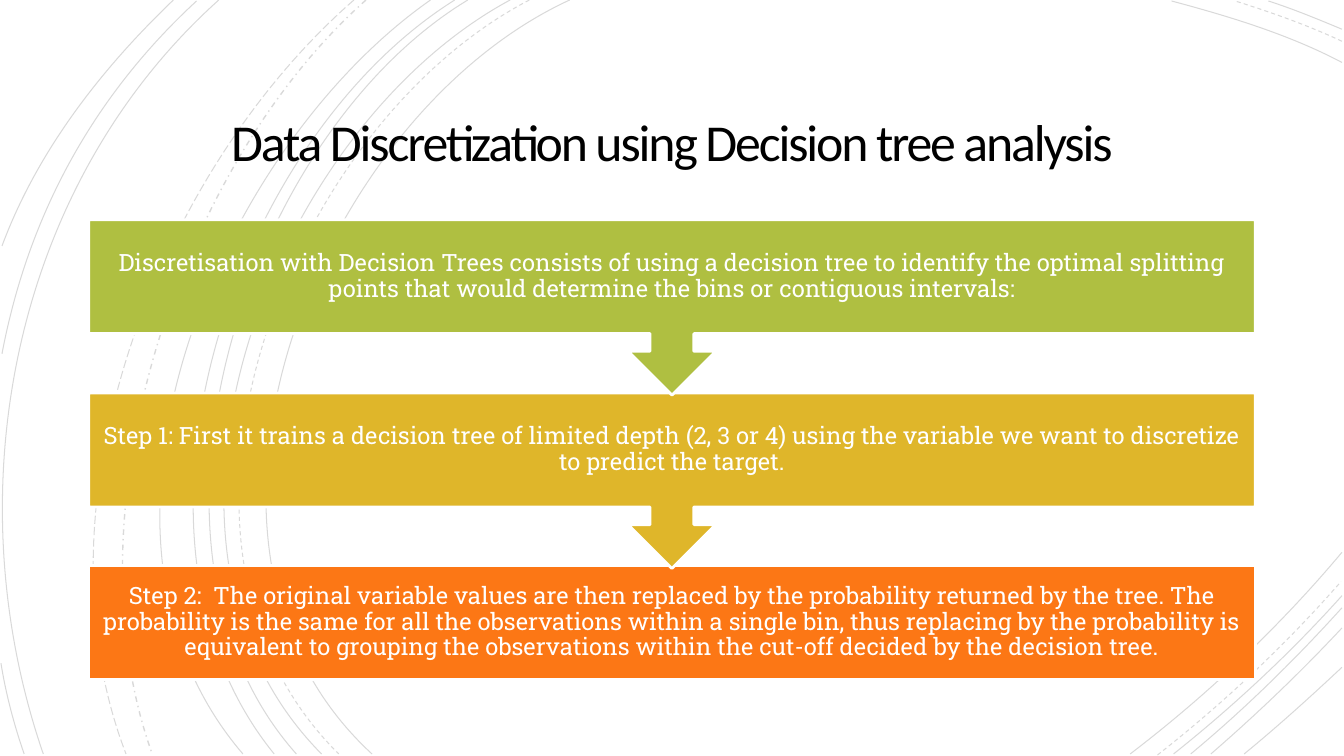
"""Builds a slide on data discretization with a decision tree: three linked steps over faint arcs."""
from typing import NamedTuple

from lxml import etree
from pptx import Presentation
from pptx import util as u
from pptx.dml.color import RGBColor
from pptx.enum import dml, shapes, text
from pptx.oxml.ns import qn

EMU_PER_PX = 9144
SLIDE_WIDTH, SLIDE_HEIGHT = 1333, 750
SOLID, DASHED = dml.MSO_LINE.SOLID, dml.MSO_LINE.DASH
DASH_DOT, LONG_DASH = dml.MSO_LINE.DASH_DOT, dml.MSO_LINE.LONG_DASH

STEP_LEFT, STEP_WIDTH = 88, 1157
BOX_HEIGHT, CALLOUT_HEIGHT = 113, 174


class Arc(NamedTuple):
    """A cubic curve given by its four control points in px."""
    points: tuple[tuple[int, int], ...]
    dash: dml.MSO_LINE = SOLID
    weight: float = 0.75


class Step(NamedTuple):
    """One coloured band of the process."""
    top: int
    fill: str
    wording: str
    leads_on: bool = True


ARCS = [
    Arc(((565, 0), (315, 115), (143, 540), (369, 748))),
    Arc(((1331, 62), (1278, 34), (1218, 16), (1162, 1))),
    Arc(((1121, 748), (1197, 690), (1269, 622), (1331, 548))),
    Arc(((525, 0), (285, 125), (123, 537), (336, 748)), DASHED),
    Arc(((1331, 41), (1297, 25), (1260, 12), (1225, 1)), DASHED),
    Arc(((1148, 749), (1213, 698), (1275, 640), (1330, 577)), DASHED),
    Arc(((506, 0), (270, 127), (110, 537), (319, 748))),
    Arc(((1331, 29), (1307, 19), (1283, 9), (1258, 1))),
    Arc(((1164, 748), (1223, 701), (1280, 648), (1331, 591))),
    Arc(((464, 0), (244, 133), (110, 541), (294, 748))),
    Arc(((1181, 748), (1234, 704), (1284, 655), (1331, 603))),
    Arc(((451, 0), (231, 138), (97, 533), (272, 748))),
    Arc(((1201, 748), (1246, 709), (1290, 667), (1331, 623))),
    Arc(((427, 0), (217, 147), (53, 529), (241, 748))),
    Arc(((1234, 748), (1267, 721), (1299, 692), (1331, 662))),
    Arc(((363, 0), (176, 166), (65, 509), (151, 748)), DASH_DOT, 1),
    Arc(((351, 0), (157, 169), (29, 499), (125, 748)), LONG_DASH),
    Arc(((217, 0), (11, 185), (-46, 490), (43, 748))),
    Arc(((195, 1), (92, 96), (28, 214), (2, 351))),
    Arc(((1, 658), (6, 689), (14, 719), (24, 748))),
    Arc(((172, 0), (100, 69), (37, 150), (2, 244))),
]

STEPS = [
    Step(218, "AFBF41",
         "Discretisation with Decision Trees consists of using a decision tree to identify "
         "the optimal splitting points that would determine the bins or contiguous intervals:"),
    Step(390, "DFB62A",
         "Step 1: First it trains a decision tree of limited depth (2, 3 or 4) using the "
         "variable we want to discretize to predict the target."),
    Step(561, "FC7715",
         "Step 2:  The original variable values are then replaced by the probability returned "
         "by the tree. The probability is the same for all the observations within a single bin, "
         "thus replacing by the probability is equivalent to grouping the observations within "
         "the cut-off decided by the decision tree.", leads_on=False),
]


def px(length: int) -> u.Emu:
    """Turn px into EMU."""
    return u.Emu(length * EMU_PER_PX)


def colour(code: str) -> RGBColor:
    """Turn a hex string into a colour."""
    return RGBColor.from_string(code)


def add_filled(slide, outline: shapes.MSO_SHAPE, box: tuple[int, int, int, int], fill: str):
    """Add a flat preset shape in one colour."""
    panel = slide.shapes.add_shape(outline, *map(px, box))
    panel.shadow.inherit = False
    panel.fill.solid()
    panel.fill.fore_color.rgb = colour(fill)
    return panel


def draw_arc(slide, arc: Arc) -> None:
    """Draw one faint background curve."""
    start, *rest = arc.points
    builder = slide.shapes.build_freeform(*start, scale=EMU_PER_PX)
    builder.add_line_segments(rest, close=False)
    curve = builder.convert_to_shape()
    segments = curve._element.findall(".//" + qn("a:lnTo"))
    bezier = etree.SubElement(segments[0].getparent(), qn("a:cubicBezTo"))
    for segment in segments:
        bezier.append(segment[0])
        segment.getparent().remove(segment)
    curve.shadow.inherit = False
    curve.fill.background()
    curve.line.color.rgb = colour("000000")
    curve.line.width = u.Pt(arc.weight)
    curve.line.dash_style = arc.dash
    ink = curve._element.spPr.find(qn("a:ln")).find(".//" + qn("a:srgbClr"))
    etree.SubElement(ink, qn("a:alpha"), val="15000")


def set_wording(frame, wording: str, font: str, size: int, ink: str,
                spacing: float, inset: int) -> None:
    """Fill a text frame with one centred paragraph."""
    frame.text = wording
    frame.word_wrap = True
    frame.auto_size = text.MSO_AUTO_SIZE.NONE
    frame.vertical_anchor = text.MSO_ANCHOR.MIDDLE
    frame.margin_left = frame.margin_right = px(inset)
    frame.margin_top = frame.margin_bottom = px(inset)
    paragraph = frame.paragraphs[0]
    paragraph.alignment = text.PP_ALIGN.CENTER
    paragraph.line_spacing = spacing
    paragraph.font.name = font
    paragraph.font.size = u.Pt(size)
    paragraph.font.color.rgb = colour(ink)


def place_heading(slide) -> None:
    """Place the title in front of the arcs."""
    heading = slide.shapes.title
    heading.left, heading.top, heading.width, heading.height = map(px, (192, 87, 949, 115))
    set_wording(heading.text_frame, "Data Discretization using Decision tree analysis",
                "Calibri", 37, "000000", 0.85, 25)
    heading.text_frame.paragraphs[0].runs[0]._r.get_or_add_rPr().set("spc", "-150")
    heading._element.getparent().append(heading._element)


def draw_step(slide, step: Step) -> None:
    """Draw one band, with an arrow when another step follows."""
    if step.leads_on:
        outline, height = shapes.MSO_SHAPE.DOWN_ARROW_CALLOUT, CALLOUT_HEIGHT
    else:
        outline, height = shapes.MSO_SHAPE.RECTANGLE, BOX_HEIGHT
    band = add_filled(slide, outline, (STEP_LEFT, step.top, STEP_WIDTH, height), step.fill)
    band.line.color.rgb = colour("FFFFFF")
    band.line.width = u.Pt(2)
    set_wording(band.text_frame, step.wording, "Roboto Slab", 17, "FFFFFF", 0.9, 13)


def main() -> None:
    """Build and save the slide."""
    deck = Presentation()
    deck.slide_width, deck.slide_height = px(SLIDE_WIDTH), px(SLIDE_HEIGHT)
    slide = deck.slides.add_slide(deck.slide_layouts[5])
    backdrop = add_filled(slide, shapes.MSO_SHAPE.RECTANGLE,
                          (0, 0, SLIDE_WIDTH, SLIDE_HEIGHT), "FFFFFF")
    backdrop.line.fill.background()
    for arc in ARCS:
        draw_arc(slide, arc)
    place_heading(slide)
    for step in reversed(STEPS):
        draw_step(slide, step)
    deck.save("out.pptx")


if __name__ == "__main__":
    main()
